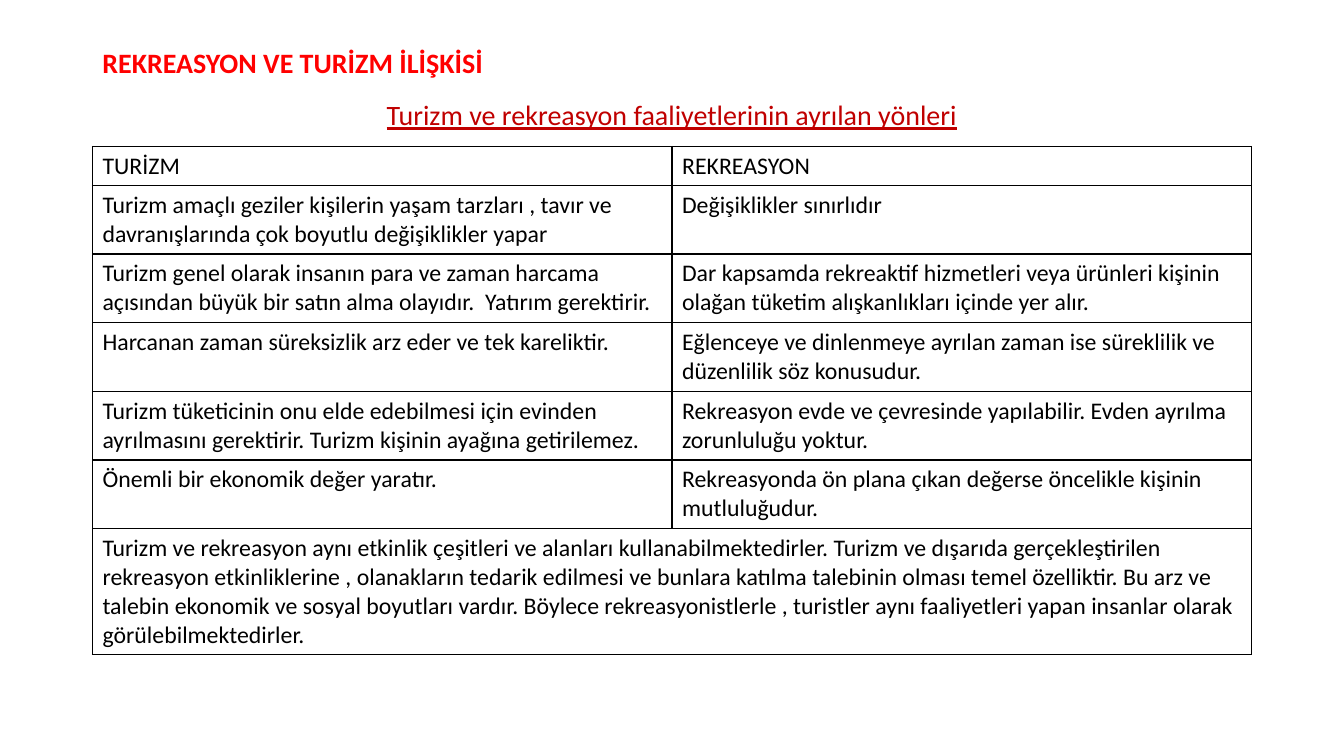
from lxml import etree
from pptx import Presentation
from pptx.dml.color import RGBColor
from pptx.enum.text import MSO_ANCHOR, PP_ALIGN
from pptx.oxml.ns import qn
from pptx.util import Cm, Pt

TOP, MIDDLE = MSO_ANCHOR.TOP, MSO_ANCHOR.MIDDLE
LEFT, CENTER = PP_ALIGN.LEFT, PP_ALIGN.CENTER

RED = RGBColor(0xFF, 0x00, 0x00)
DARK_RED = RGBColor(0xC0, 0x00, 0x00)
BLACK = RGBColor(0x00, 0x00, 0x00)

FONT = "Calibri"
MARGIN = Cm(2.33)
CONTENT_WIDTH = Cm(29.21)

COMPARISON = [
    ("TURİZM", "REKREASYON"),
    ("Turizm amaçlı geziler kişilerin yaşam tarzları , tavır ve "
     "davranışlarında çok boyutlu değişiklikler yapar",
     "Değişiklikler sınırlıdır"),
    ("Turizm genel olarak insanın para ve zaman harcama açısından büyük bir "
     "satın alma olayıdır.  Yatırım gerektirir.",
     "Dar kapsamda rekreaktif hizmetleri veya ürünleri kişinin olağan "
     "tüketim alışkanlıkları içinde yer alır."),
    ("Harcanan zaman süreksizlik arz eder ve tek kareliktir.",
     "Eğlenceye ve dinlenmeye ayrılan zaman ise süreklilik ve düzenlilik "
     "söz konusudur."),
    ("Turizm tüketicinin onu elde edebilmesi için evinden ayrılmasını "
     "gerektirir. Turizm kişinin ayağına getirilemez.",
     "Rekreasyon evde ve çevresinde yapılabilir. Evden ayrılma zorunluluğu "
     "yoktur."),
    ("Önemli bir ekonomik değer yaratır.",
     "Rekreasyonda ön plana çıkan değerse öncelikle kişinin mutluluğudur."),
]
SUMMARY = (
    "Turizm ve rekreasyon aynı etkinlik çeşitleri ve alanları "
    "kullanabilmektedirler. Turizm ve dışarıda gerçekleştirilen rekreasyon "
    "etkinliklerine , olanakların tedarik edilmesi ve bunlara katılma "
    "talebinin olması temel özelliktir. Bu arz ve talebin ekonomik ve sosyal "
    "boyutları vardır. Böylece rekreasyonistlerle , turistler aynı "
    "faaliyetleri yapan insanlar olarak görülebilmektedirler."
)
HEADER_HEIGHT, ROW_HEIGHT, SUMMARY_HEIGHT = Cm(0.98), Cm(1.73), Cm(3.18)


def write(frame, text, size=17, color=BLACK, bold=False, underline=False,
          align=LEFT, line_spacing=1.0, space_before=0):
    para = frame.paragraphs[0]
    para.alignment = align
    para.line_spacing = line_spacing
    para.space_before = Pt(space_before)
    span = para.add_run()
    span.text = text
    font = span.font
    font.name, font.size, font.color.rgb = FONT, Pt(size), color
    font.bold, font.underline = bold, underline


def add_heading(page, left, top, width, height, text, anchor=TOP, **text_format):
    box = page.shapes.add_textbox(left, top, width, height)
    frame = box.text_frame
    frame.word_wrap = True
    frame.vertical_anchor = anchor
    write(frame, text, size=20, line_spacing=0.9, **text_format)


def set_borders(cell, color=BLACK, width=Pt(1)):
    properties = cell._tc.get_or_add_tcPr()
    for position, side in enumerate(("a:lnL", "a:lnR", "a:lnT", "a:lnB")):
        line = etree.Element(qn(side), w=str(width))
        fill = etree.SubElement(line, qn("a:solidFill"))
        etree.SubElement(fill, qn("a:srgbClr"), val=str(color))
        properties.insert(position, line)


def add_comparison_table(page, left, top, width):
    heights = [HEADER_HEIGHT] + [ROW_HEIGHT] * (len(COMPARISON) - 1) + [SUMMARY_HEIGHT]
    table = page.shapes.add_table(
        len(heights), 2, left, top, width, sum(heights)).table
    table.first_row = table.horz_banding = False
    for row, height in zip(table.rows, heights):
        row.height = height
    for cell in table.iter_cells():
        cell.fill.background()
        set_borders(cell)

    # Side by side differences
    for row, texts in enumerate(COMPARISON):
        for column, text in enumerate(texts):
            write(table.cell(row, column).text_frame, text)

    # Summary across both columns
    last = len(COMPARISON)
    summary = table.cell(last, 0)
    summary.merge(table.cell(last, 1))
    write(summary.text_frame, SUMMARY)


def build_slide(deck):
    page = deck.slides.add_slide(deck.slide_layouts[6])
    # Title and subtitle
    add_heading(page, MARGIN, Cm(1.02), CONTENT_WIDTH, Cm(1.19),
                "REKREASYON VE TURİZM İLİŞKİSİ",
                anchor=MIDDLE, color=RED, bold=True)
    add_heading(page, MARGIN, Cm(2.44), CONTENT_WIDTH, Cm(14.71),
                "Turizm ve rekreasyon faaliyetlerinin ayrılan yönleri",
                color=DARK_RED, underline=True, align=CENTER, space_before=10)
    # Table of differences
    add_comparison_table(page, MARGIN, Cm(3.69), CONTENT_WIDTH)


def main():
    deck = Presentation()
    deck.slide_width, deck.slide_height = Cm(33.87), Cm(19.05)
    build_slide(deck)
    deck.save("out.pptx")


if __name__ == "__main__":
    main()
